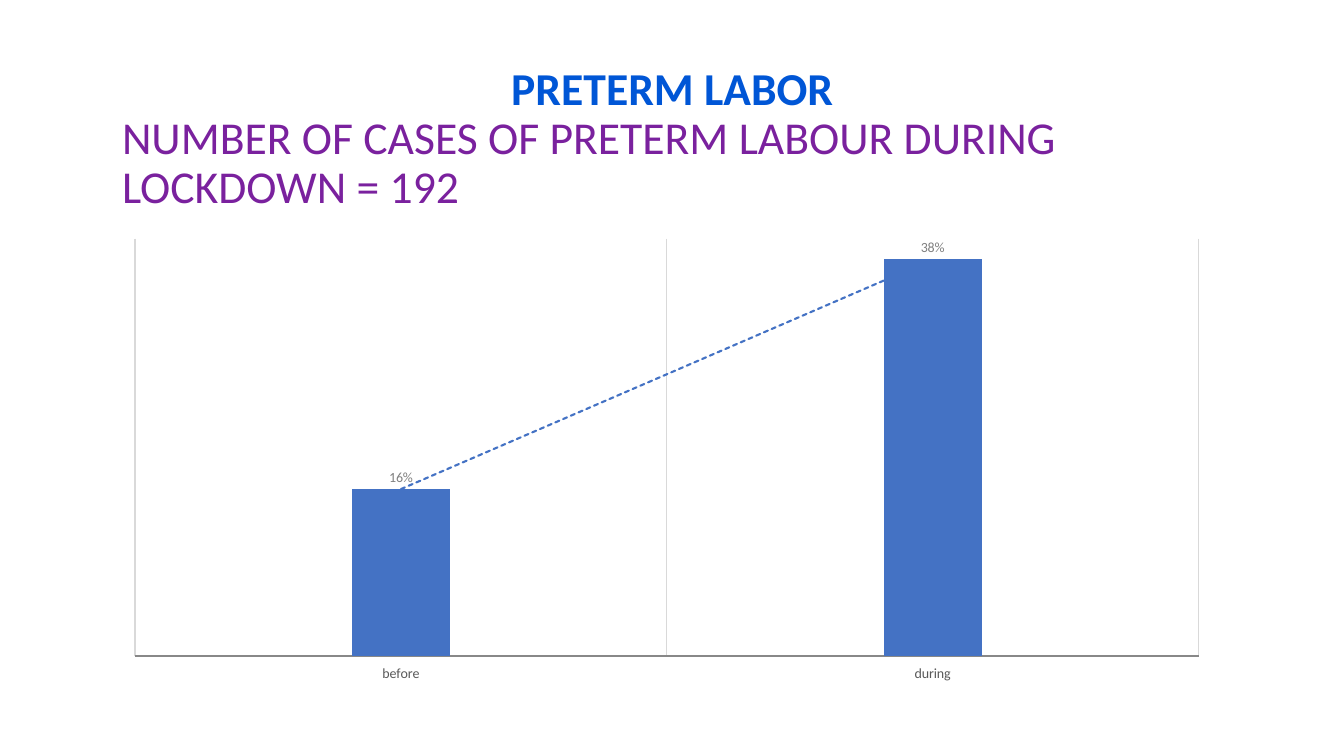
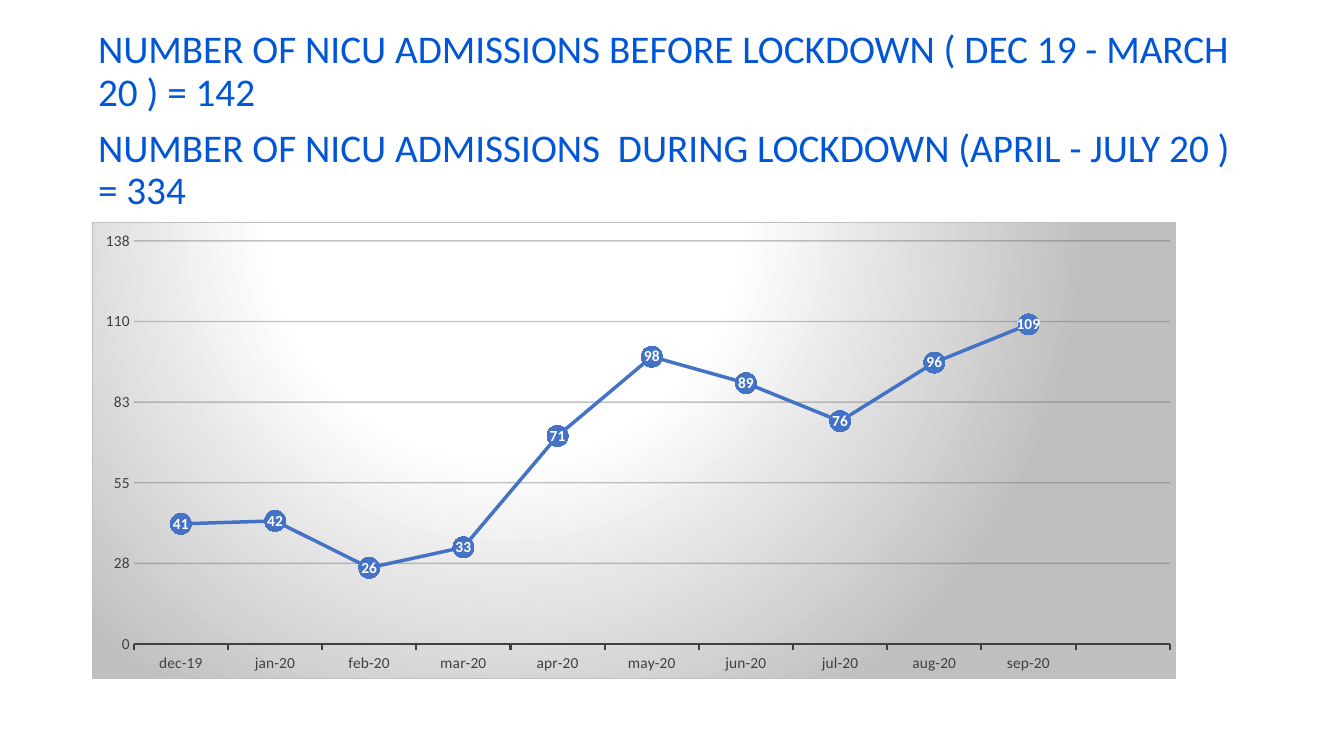
import pptx
import pptx.chart.data
import pptx.dml.color
import pptx.enum.chart
import pptx.enum.dml
import pptx.enum.text
import pptx.oxml
import pptx.oxml.ns
import pptx.util
from dataclasses import dataclass

EMU_PER_PX = 914400 / 100.8
SLIDE_SIZE = (1344, 756)
NAMESPACES = pptx.oxml.ns.nsdecls("c", "a")

CHART_TYPE = pptx.enum.chart.XL_CHART_TYPE
LABEL_POSITION = pptx.enum.chart.XL_LABEL_POSITION
TICK_LABELS = pptx.enum.chart.XL_TICK_LABEL_POSITION
TICK_MARK = pptx.enum.chart.XL_TICK_MARK
ALIGN = pptx.enum.text.PP_ALIGN
ANCHOR = pptx.enum.text.MSO_ANCHOR


@dataclass(frozen=True)
class Theme:
    font: str = "Calibri"
    blue: str = "0056D6"
    purple: str = "7A219E"
    series: str = "4472C4"
    black: str = "000000"
    white: str = "FFFFFF"
    axis_text: str = "595959"
    dark_axis: str = "404040"
    light_axis: str = "888888"
    value_label: str = "808080"
    light_grid: str = "D9D9D9"
    dark_grid: str = "666666"
    panel: str = "BFBFBF"
    title_size: float = 32.6
    body_size: float = 28
    small_size: float = 10
    axis_size: float = 11


THEME = Theme()

PRETERM = {
    "title_box": (117, 61, 1111, 157),
    "title": [
        ("PRETERM LABOR", {"color": THEME.blue, "bold": True, "align": ALIGN.CENTER}),
        ("NUMBER OF CASES OF PRETERM LABOUR DURING LOCKDOWN = 192", {"color": THEME.purple}),
    ],
    "chart": {
        "kind": CHART_TYPE.COLUMN_CLUSTERED,
        "box": (121, 222, 1083, 462),
        "plot_area": (0.013, 0.036, 0.982, 0.904),
        "shares": {"before": 0.16, "during": 0.38},
        "number_format": "0%",
        "scale": (0.4, 0.1),
    },
}

NICU = {
    "body_box": (93, 25, 1159, 200),
    "body": [
        "NUMBER OF NICU ADMISSIONS BEFORE LOCKDOWN ( DEC 19 - MARCH 20 ) = 142",
        "NUMBER OF NICU ADMISSIONS  DURING LOCKDOWN (APRIL - JULY 20 ) = 334",
    ],
    "chart": {
        "kind": CHART_TYPE.LINE_MARKERS,
        "box": (92, 222, 1084, 457),
        "plot_area": (0.038, 0.04, 0.957, 0.885),
        "shares": {
            "dec-19": 41, "jan-20": 42, "feb-20": 26, "mar-20": 33, "apr-20": 71,
            "may-20": 98, "jun-20": 89, "jul-20": 76, "aug-20": 96, "sep-20": 109,
            "": None,
        },
        "number_format": "0",
        "scale": (137.5, 27.5),
    },
}


def px(length):
    return pptx.util.Emu(round(length * EMU_PER_PX))


def rgb(color):
    return pptx.dml.color.RGBColor.from_string(color)


def style_font(font, size, color, bold=False):
    font.name = THEME.font
    font.size = pptx.util.Pt(size)
    font.bold = bold
    font.color.rgb = rgb(color)


def style_line(line, color, width):
    line.color.rgb = rgb(color)
    line.width = pptx.util.Pt(width)


def add_text(frame, text, *, size, color, bold=False, align=ALIGN.LEFT, before=0):
    """Fill the frame's first paragraph if it is still empty, else append one."""
    first = frame.paragraphs[0]
    paragraph = frame.add_paragraph() if first.runs else first
    paragraph.alignment = align
    paragraph.line_spacing = 0.9
    paragraph.space_before = pptx.util.Pt(before)
    run = paragraph.add_run()
    run.text = text
    style_font(run.font, size, color, bold)
    return paragraph


def place_placeholder(placeholder, box, anchor):
    placeholder.left, placeholder.top, placeholder.width, placeholder.height = map(px, box)
    frame = placeholder.text_frame
    frame.word_wrap = True
    frame.auto_size = pptx.enum.text.MSO_AUTO_SIZE.NONE
    frame.vertical_anchor = anchor
    frame.margin_left = frame.margin_right = pptx.util.Inches(0.05)
    frame.margin_top = frame.margin_bottom = pptx.util.Inches(0.05)
    return frame


def remove_bullet(paragraph):
    properties = paragraph._p.get_or_add_pPr()
    properties.set("marL", "0")
    properties.set("indent", "0")
    properties.append(pptx.oxml.parse_xml(f"<a:buNone {NAMESPACES}/>"))


def set_plot_area(chart, fractions):
    """Fix the inner plot area as x, y, width and height fractions of the chart."""
    plot_area = chart.element.xpath("c:chart/c:plotArea")[0]
    for layout in plot_area.xpath("c:layout"):
        plot_area.remove(layout)
    sides = "".join(f'<c:{side} val="{value}"/>' for side, value in zip("xywh", fractions))
    plot_area.insert(0, pptx.oxml.parse_xml(
        f'<c:layout {NAMESPACES}><c:manualLayout><c:layoutTarget val="inner"/>'
        f'<c:xMode val="edge"/><c:yMode val="edge"/>{sides}'
        "</c:manualLayout></c:layout>".replace(
            "<c:x ", "<c:x ")))


def add_data_chart(slide, content):
    """Add a one-series chart with the settings both charts have in common."""
    data = pptx.chart.data.CategoryChartData(number_format=content["number_format"])
    data.categories = list(content["shares"])
    data.add_series("Series 1", list(content["shares"].values()))
    chart = slide.shapes.add_chart(content["kind"], *map(px, content["box"]), data).chart
    chart.has_title = False
    chart.has_legend = False
    style_font(chart.font, THEME.small_size, THEME.black)
    set_plot_area(chart, content["plot_area"])
    chart.plots[0].vary_by_categories = False

    chart.category_axis.tick_label_position = TICK_LABELS.LOW
    values = chart.value_axis
    values.minimum_scale = 0
    values.maximum_scale, values.major_unit = content["scale"]
    values.major_tick_mark = TICK_MARK.NONE
    values.format.line.fill.background()
    values.tick_labels.number_format = content["number_format"]
    values.tick_labels.number_format_is_linked = False

    labels = chart.plots[0].series[0].data_labels
    labels.show_value = True
    labels.number_format = content["number_format"]
    labels.number_format_is_linked = False
    return chart


def add_trend_line(chart):
    categories = chart.element.xpath(".//c:ser/c:cat")[0]
    categories.addprevious(pptx.oxml.parse_xml(
        f'<c:trendline {NAMESPACES}><c:spPr><a:ln w="19050" cap="rnd"><a:solidFill>'
        f'<a:srgbClr val="{THEME.series}"/></a:solidFill><a:prstDash val="sysDash"/></a:ln>'
        '</c:spPr><c:trendlineType val="linear"/><c:dispRSqr val="0"/>'
        '<c:dispEq val="0"/></c:trendline>'))


def add_panel(chart):
    """Give the chart area a radial gradient and a border."""
    stops = ((0, THEME.white), (39, THEME.white), (100, THEME.panel))
    gradient = "".join(
        f'<a:gs pos="{pos * 1000}"><a:srgbClr val="{color}"/></a:gs>' for pos, color in stops)
    chart.element.xpath("c:txPr")[0].addprevious(pptx.oxml.parse_xml(
        f'<c:spPr {NAMESPACES}><a:gradFill><a:gsLst>{gradient}</a:gsLst><a:path path="circle">'
        '<a:fillToRect l="38000" t="-20000" r="62000" b="120000"/></a:path></a:gradFill>'
        f'<a:ln w="12700"><a:solidFill><a:srgbClr val="{THEME.panel}"/></a:solidFill></a:ln>'
        "</c:spPr>"))


def build_preterm(deck):
    slide = deck.slides.add_slide(deck.slide_layouts.get_by_name("Title Only"))
    title = place_placeholder(slide.shapes.title, PRETERM["title_box"], ANCHOR.MIDDLE)
    for text, look in PRETERM["title"]:
        add_text(title, text, size=THEME.title_size, **look)

    chart = add_data_chart(slide, PRETERM["chart"])
    plot = chart.plots[0]
    plot.gap_width, plot.overlap = 444, -90
    share = plot.series[0]
    share.format.fill.solid()
    share.format.fill.fore_color.rgb = rgb(THEME.series)
    share.data_labels.position = LABEL_POSITION.OUTSIDE_END
    style_font(share.data_labels.font, THEME.small_size, THEME.value_label)
    add_trend_line(chart)

    periods = chart.category_axis
    periods.major_tick_mark = TICK_MARK.NONE
    periods.has_major_gridlines = True
    style_line(periods.major_gridlines.format.line, THEME.light_grid, 1)
    style_line(periods.format.line, THEME.light_axis, 1)
    style_font(periods.tick_labels.font, THEME.small_size, THEME.axis_text)
    chart.value_axis.has_major_gridlines = False
    chart.value_axis.tick_label_position = TICK_LABELS.NONE


def build_nicu(deck):
    slide = deck.slides.add_slide(deck.slide_layouts.get_by_name("Title and Content"))
    unused_title = slide.shapes.title.element
    unused_title.getparent().remove(unused_title)
    body = place_placeholder(slide.placeholders[1], NICU["body_box"], ANCHOR.TOP)
    for text in NICU["body"]:
        remove_bullet(add_text(body, text, size=THEME.body_size, color=THEME.blue, before=10))

    chart = add_data_chart(slide, NICU["chart"])
    add_panel(chart)
    admissions = chart.plots[0].series[0]
    admissions.smooth = False
    style_line(admissions.format.line, THEME.series, 2.5)
    marker = admissions.marker
    marker.style = pptx.enum.chart.XL_MARKER_STYLE.CIRCLE
    marker.size = 15
    marker.format.fill.solid()
    marker.format.fill.fore_color.rgb = rgb(THEME.series)
    marker.format.line.fill.background()
    admissions.data_labels.position = LABEL_POSITION.CENTER
    style_font(admissions.data_labels.font, THEME.axis_size, THEME.white, bold=True)

    months, counts = chart.category_axis, chart.value_axis
    months.major_tick_mark = TICK_MARK.OUTSIDE
    style_line(months.format.line, THEME.dark_axis, 1.5)
    for axis in (months, counts):
        style_font(axis.tick_labels.font, THEME.axis_size, THEME.dark_axis)
    counts.has_major_gridlines = True
    style_line(counts.major_gridlines.format.line, THEME.dark_grid, 1)
    grid_color = chart.element.xpath(".//c:valAx/c:majorGridlines//a:srgbClr")[0]
    grid_color.append(pptx.oxml.parse_xml(f'<a:alpha {NAMESPACES} val="39000"/>'))


def main():
    deck = pptx.Presentation()
    deck.slide_width, deck.slide_height = map(px, SLIDE_SIZE)
    build_preterm(deck)
    build_nicu(deck)
    deck.save("out.pptx")


if __name__ == "__main__":
    main()
